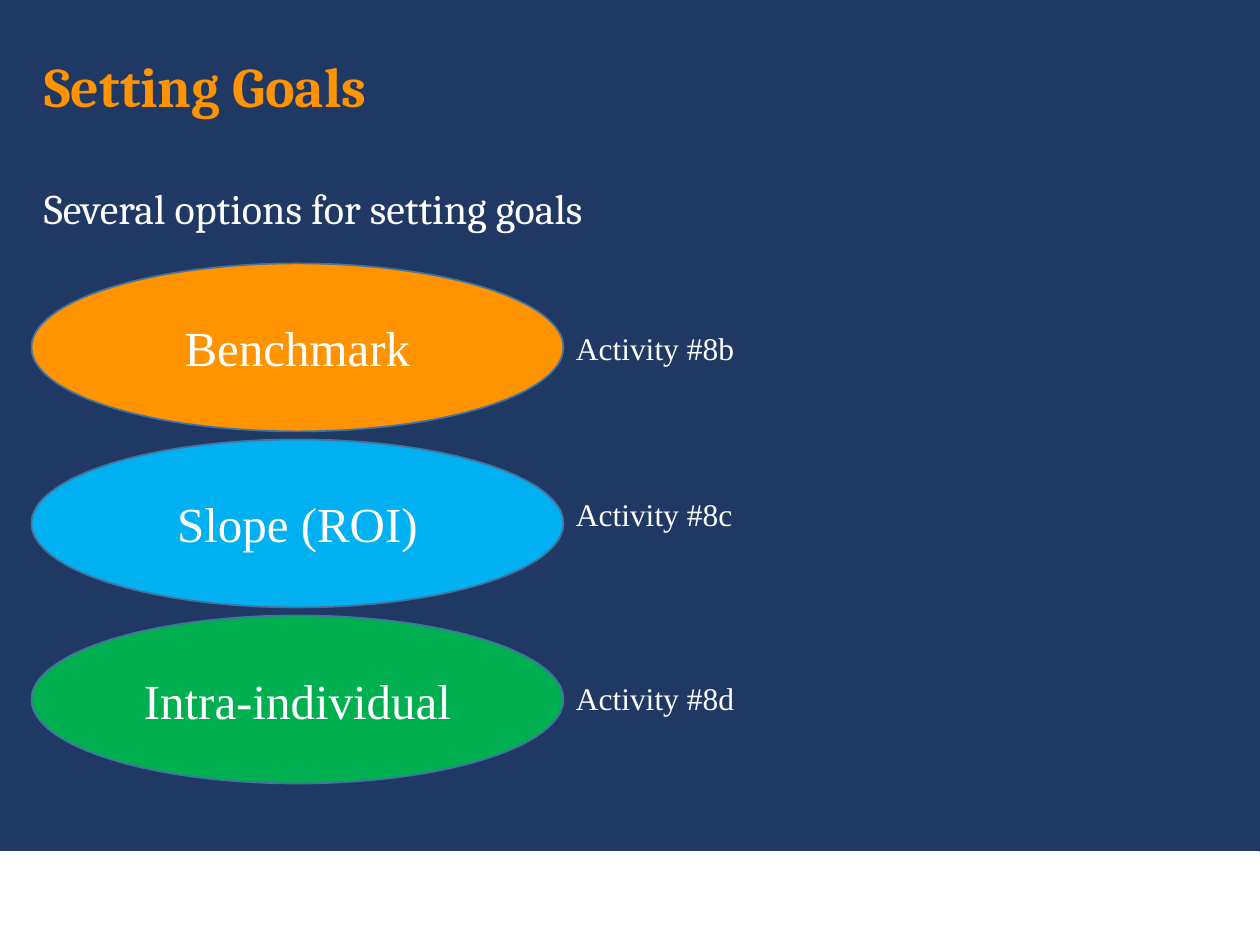
from pptx import Presentation
from pptx.dml.color import RGBColor
from pptx.enum.shapes import MSO_SHAPE as Preset
from pptx.enum.text import MSO_ANCHOR as Anchor, MSO_AUTO_SIZE as AutoSize, PP_ALIGN as Align
from pptx.util import Pt

NAVY, WHITE, ORANGE, BLUE, GREEN, OUTLINE = (
    "203864", "FFFFFF", "FF9300", "00B0F0", "00B050", "43739E")
HEADING_FONT, LABEL_FONT = "Cambria", "Times New Roman"


def color(hex_string):
    return RGBColor.from_string(hex_string)


class GoalSlide:
    """Holds the style and the slide being built."""

    formats = {
        "title": {"name": HEADING_FONT, "size": Pt(32), "bold": True},
        "lead": {"name": HEADING_FONT, "size": Pt(24), "bold": False},
        "option": {"name": LABEL_FONT, "size": Pt(28), "bold": False},
        "activity": {"name": LABEL_FONT, "size": Pt(18), "bold": False},
    }

    def __init__(self, deck):
        self.slide = deck.slides.add_slide(deck.slide_layouts[5])
        self.fill(self.slide.background, NAVY)

    def fill(self, part, hex_string):
        part.fill.solid()
        part.fill.fore_color.rgb = color(hex_string)

    def set_text(self, part, text, role, ink=WHITE, align=Align.LEFT, spacing=None):
        paragraph = part.text_frame.paragraphs[0]
        paragraph.alignment = align
        paragraph.line_spacing = spacing
        run = paragraph.add_run()
        run.text = text
        for attribute, value in self.formats[role].items():
            setattr(run.font, attribute, value)
        run.font.color.rgb = color(ink)

    def title(self, text, left, top, width, height):
        heading = self.slide.shapes.title
        place = {"left": left, "top": top, "width": width, "height": height}
        for attribute, value in place.items():
            setattr(heading, attribute, Pt(value))
        self.fill(heading, NAVY)
        heading.text_frame.vertical_anchor = Anchor.MIDDLE
        self.set_text(heading, text, "title", ORANGE, spacing=1.1)

    def shape(self, preset, box, fill, line):
        shape = self.slide.shapes.add_shape(preset, *map(Pt, box))
        shape.shadow.inherit = False
        self.fill(shape, fill)
        shape.line.color.rgb = color(line)
        shape.line.width = Pt(1)
        return shape

    def option(self, text, box, fill):
        oval = self.shape(Preset.OVAL, box, fill, OUTLINE)
        oval.text_frame.vertical_anchor = Anchor.MIDDLE
        self.set_text(oval, text, "option", align=Align.CENTER)

    def text(self, text, box, role, wrap=True, spacing=None):
        label = self.slide.shapes.add_textbox(*map(Pt, box))
        label.text_frame.word_wrap = wrap
        if not wrap:
            label.text_frame.auto_size = AutoSize.SHAPE_TO_FIT_TEXT
        self.set_text(label, text, role, spacing=spacing)


def main():
    deck = Presentation()
    deck.slide_width, deck.slide_height = Pt(720), Pt(540)
    goals = GoalSlide(deck)

    # Footer band, title and lead sentence
    goals.shape(Preset.RECTANGLE, (0, 486.7, 719.3, 53.3), WHITE, WHITE)
    margin, content_width = 18, 684
    goals.title("Setting Goals", margin, 18, content_width, 57.6)
    goals.text("Several options for setting goals",
               (margin, 98, content_width, 381), "lead", spacing=1.1)

    # Goal options, each with its activity beside it
    oval_top, oval_width, oval_height, step = 150.5, 304, 96, 100.6
    options = [
        ("Benchmark", ORANGE, "Activity #8b", 184.3, 109.4),
        ("Slope (ROI)", BLUE, "Activity #8c", 279.4, 107.3),
        ("Intra-individual", GREEN, "Activity #8d", 384.5, 109.4),
    ]
    for row, (option, fill, activity, top, width) in enumerate(options):
        goals.option(option, (margin, oval_top + row * step, oval_width, oval_height), fill)
        goals.text(activity, (margin + oval_width, top, width, 29), "activity", wrap=False)

    deck.save("out.pptx")


if __name__ == "__main__":
    main()
